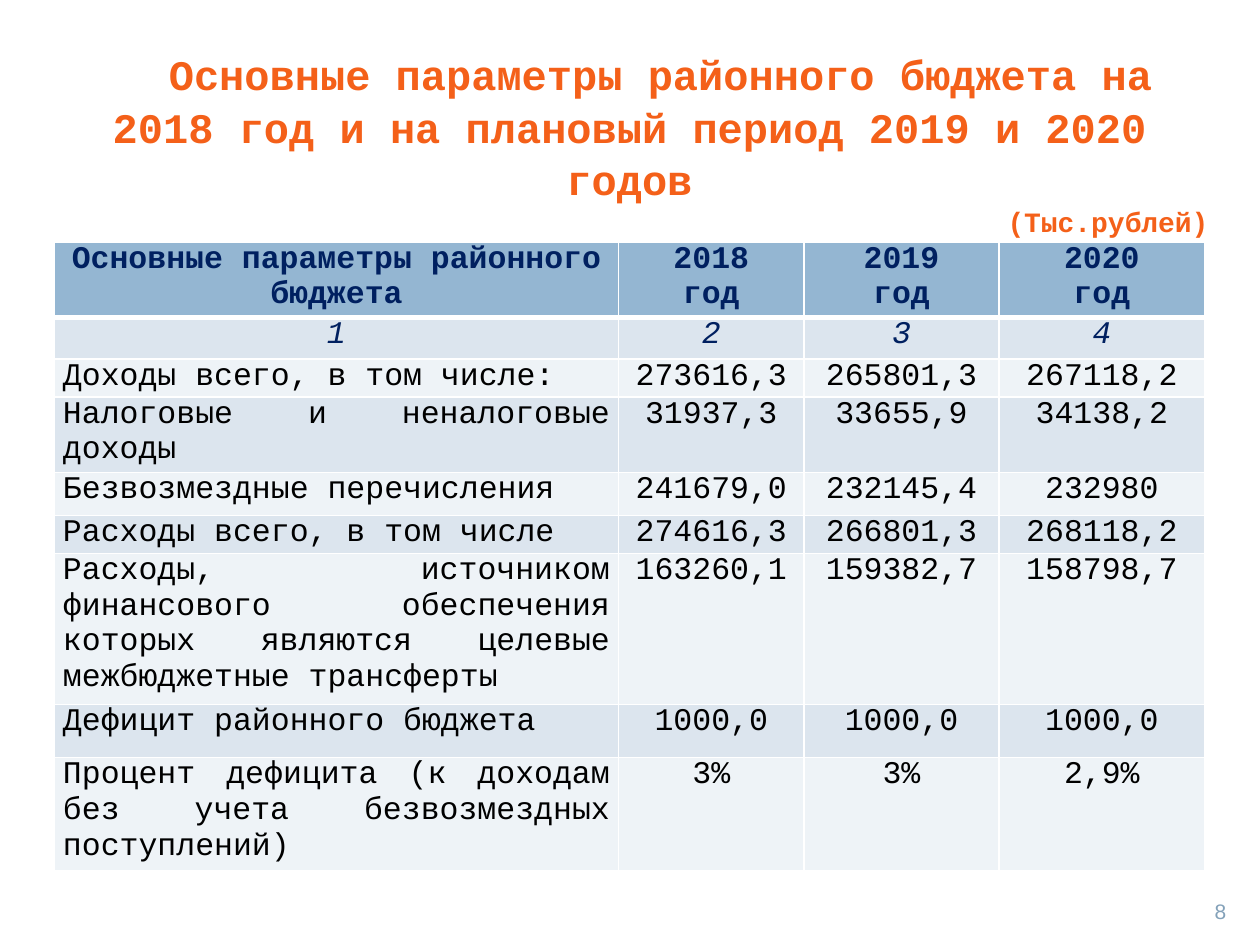
from dataclasses import dataclass

from lxml.etree import SubElement
from pptx import Presentation
from pptx.dml.color import RGBColor
from pptx.enum.text import MSO_ANCHOR, PP_ALIGN
from pptx.oxml.ns import qn
from pptx.util import Inches, Pt


@dataclass(frozen=True)
class Theme:
    mono: str = "Courier New"
    sans: str = "Arial"
    accent: str = "F46019"
    navy: str = "002060"
    black: str = "000000"
    white: str = "FFFFFF"
    page_number: str = "83A1B9"
    header_fill: str = "94B6D2"
    bands: tuple = ("DCE5EE", "EEF3F7")
    title_size: int = 24
    unit_size: int = 16
    table_size: int = 18
    page_size: int = 12


@dataclass(frozen=True)
class TextStyle:
    size: int
    color: str
    font: str = Theme.mono
    bold: bool = False
    italic: bool = False


@dataclass(frozen=True)
class BudgetRow:
    height: float
    label: str
    values: tuple


THEME = Theme()
HEADER_STYLE = TextStyle(THEME.table_size, THEME.navy, bold=True)
NUMBER_STYLE = TextStyle(THEME.table_size, THEME.navy, italic=True)
BODY_STYLE = TextStyle(THEME.table_size, THEME.black)

COLUMN_WIDTHS = (4.48, 1.47, 1.55, 1.63)
ROWS = (
    BudgetRow(0.59, "Основные параметры районного бюджета",
              ("2018\nгод", "2019\nгод", "2020\nгод")),
    BudgetRow(0.33, "1", ("2", "3", "4")),
    BudgetRow(0.29, "Доходы всего, в том числе:", ("273616,3", "265801,3", "267118,2")),
    BudgetRow(0.59, "Налоговые и неналоговые доходы", ("31937,3", "33655,9", "34138,2")),
    BudgetRow(0.34, "Безвозмездные перечисления", ("241679,0", "232145,4", "232980")),
    BudgetRow(0.29, "Расходы всего, в том числе", ("274616,3", "266801,3", "268118,2")),
    BudgetRow(1.2, "Расходы, источником финансового обеспечения которых являются "
                   "целевые межбюджетные трансферты", ("163260,1", "159382,7", "158798,7")),
    BudgetRow(0.42, "Дефицит районного бюджета", ("1000,0", "1000,0", "1000,0")),
    BudgetRow(0.9, "Процент дефицита (к доходам без учета безвозмездных поступлений)",
              ("3%", "3%", "2,9%")),
)


def format_paragraph(paragraph, style: TextStyle, alignment) -> None:
    paragraph.alignment = alignment
    for run in paragraph.runs:
        font = run.font
        font.name = style.font
        font.size = Pt(style.size)
        font.bold = style.bold
        font.italic = style.italic
        font.color.rgb = RGBColor.from_string(style.color)


def add_text_frame(slide, left: float, top: float, width: float, height: float, text: str):
    shape = slide.shapes.add_textbox(Inches(left), Inches(top), Inches(width), Inches(height))
    shape.text_frame.word_wrap = True
    shape.text_frame.text = text
    return shape.text_frame


def set_border(cell, position: int, side: str, points: float) -> None:
    properties = cell._tc.get_or_add_tcPr()
    line = SubElement(properties, qn(f"a:ln{side}"), w=str(Pt(points)))
    fill = SubElement(line, qn("a:solidFill"))
    SubElement(fill, qn("a:srgbClr"), val=THEME.white)
    properties.insert(position, line)


def fill_cell(cell, text: str, style: TextStyle, alignment, fill: str, bottom: float) -> None:
    cell.margin_left = cell.margin_right = Inches(0.07)
    cell.margin_top = cell.margin_bottom = 0
    cell.fill.solid()
    cell.fill.fore_color.rgb = RGBColor.from_string(fill)
    cell.text_frame.text = text
    for paragraph in cell.text_frame.paragraphs:
        format_paragraph(paragraph, style, alignment)
    for position, side in enumerate("LRTB"):
        set_border(cell, position, side, bottom if side == "B" else 1)


def add_title(slide) -> None:
    frame = add_text_frame(
        slide, 0.3, -0.18, 9.39, 2.46,
        "Основные параметры районного бюджета на 2018 год и на плановый период "
        "2019 и 2020 годов\n(Тыс.рублей)")
    frame.vertical_anchor = MSO_ANCHOR.MIDDLE
    frame.margin_top = Inches(0.2)
    title, unit = frame.paragraphs
    format_paragraph(title, TextStyle(THEME.title_size, THEME.accent, bold=True), PP_ALIGN.CENTER)
    format_paragraph(unit, TextStyle(THEME.unit_size, THEME.accent, bold=True), PP_ALIGN.RIGHT)
    title.line_spacing = 1.05
    for paragraph in frame.paragraphs:
        paragraph._p.get_or_add_pPr().set("indent", str(Inches(0.49)))


def add_budget_table(slide) -> None:
    table = slide.shapes.add_table(
        len(ROWS), len(COLUMN_WIDTHS), Inches(0.43), Inches(1.92),
        Inches(sum(COLUMN_WIDTHS)), Inches(sum(row.height for row in ROWS))).table
    table.horz_banding = False
    for column, width in zip(table.columns, COLUMN_WIDTHS):
        column.width = Inches(width)
    for row_index, row in enumerate(ROWS):
        table.rows[row_index].height = Inches(row.height)
        is_header = row_index == 0
        style = (HEADER_STYLE, NUMBER_STYLE)[row_index] if row_index < 2 else BODY_STYLE
        fill = THEME.header_fill if is_header else THEME.bands[(row_index - 1) % 2]
        for column_index, text in enumerate((row.label, *row.values)):
            is_label = column_index == 0 and row_index >= 2
            alignment = PP_ALIGN.JUSTIFY if is_label else PP_ALIGN.CENTER
            fill_cell(table.cell(row_index, column_index), text, style, alignment,
                      fill, 3 if is_header else 1)


def add_page_number(slide) -> None:
    frame = add_text_frame(slide, 9, 7.08, 0.83, 0.27, "8")
    format_paragraph(frame.paragraphs[0],
                     TextStyle(THEME.page_size, THEME.page_number, THEME.sans), PP_ALIGN.RIGHT)


def main() -> None:
    presentation = Presentation()
    presentation.slide_width = Inches(10)
    presentation.slide_height = Inches(7.5)
    slide = presentation.slides.add_slide(presentation.slide_layouts[6])

    # Heading, table and page number
    add_title(slide)
    add_budget_table(slide)
    add_page_number(slide)

    presentation.save("out.pptx")


if __name__ == "__main__":
    main()
